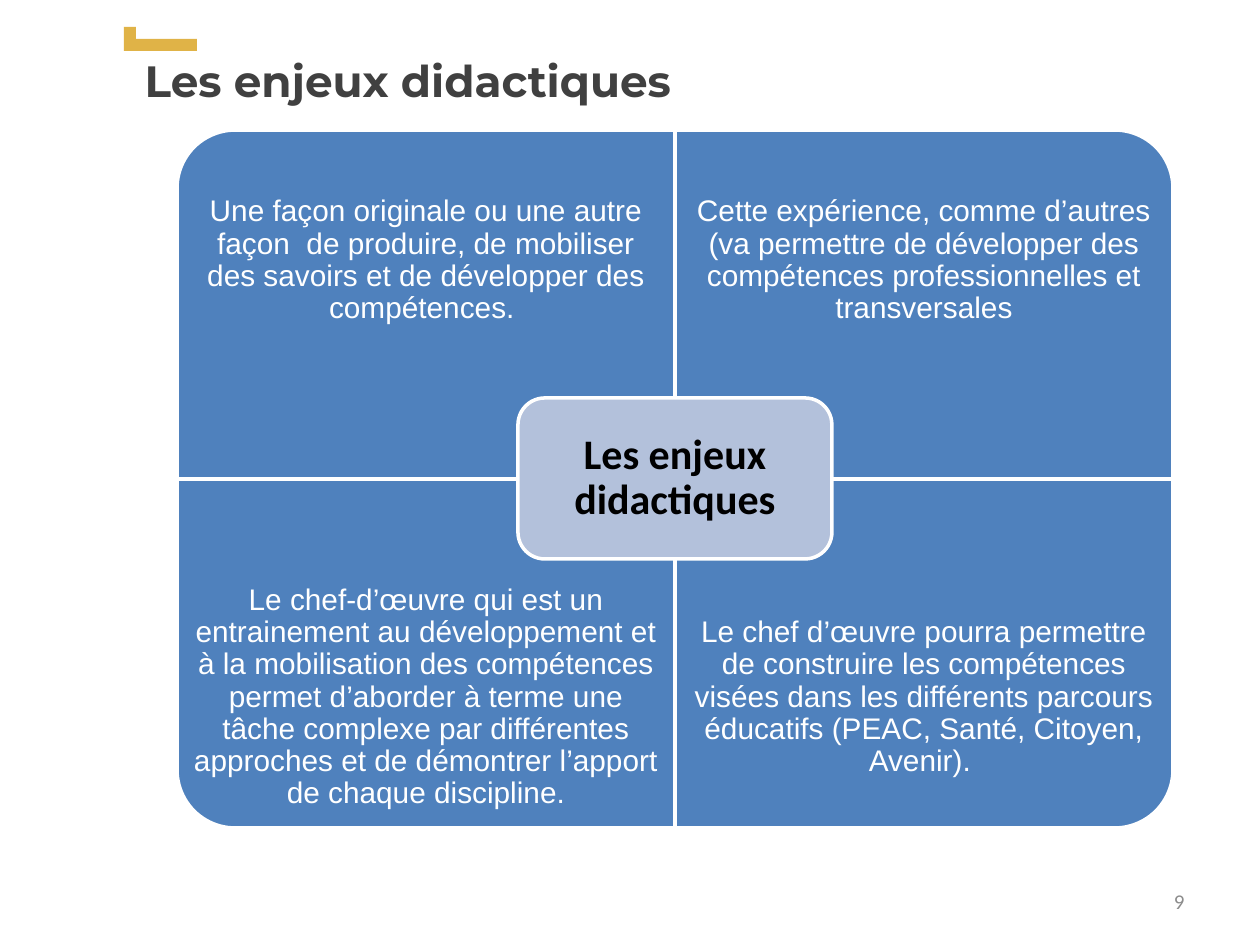
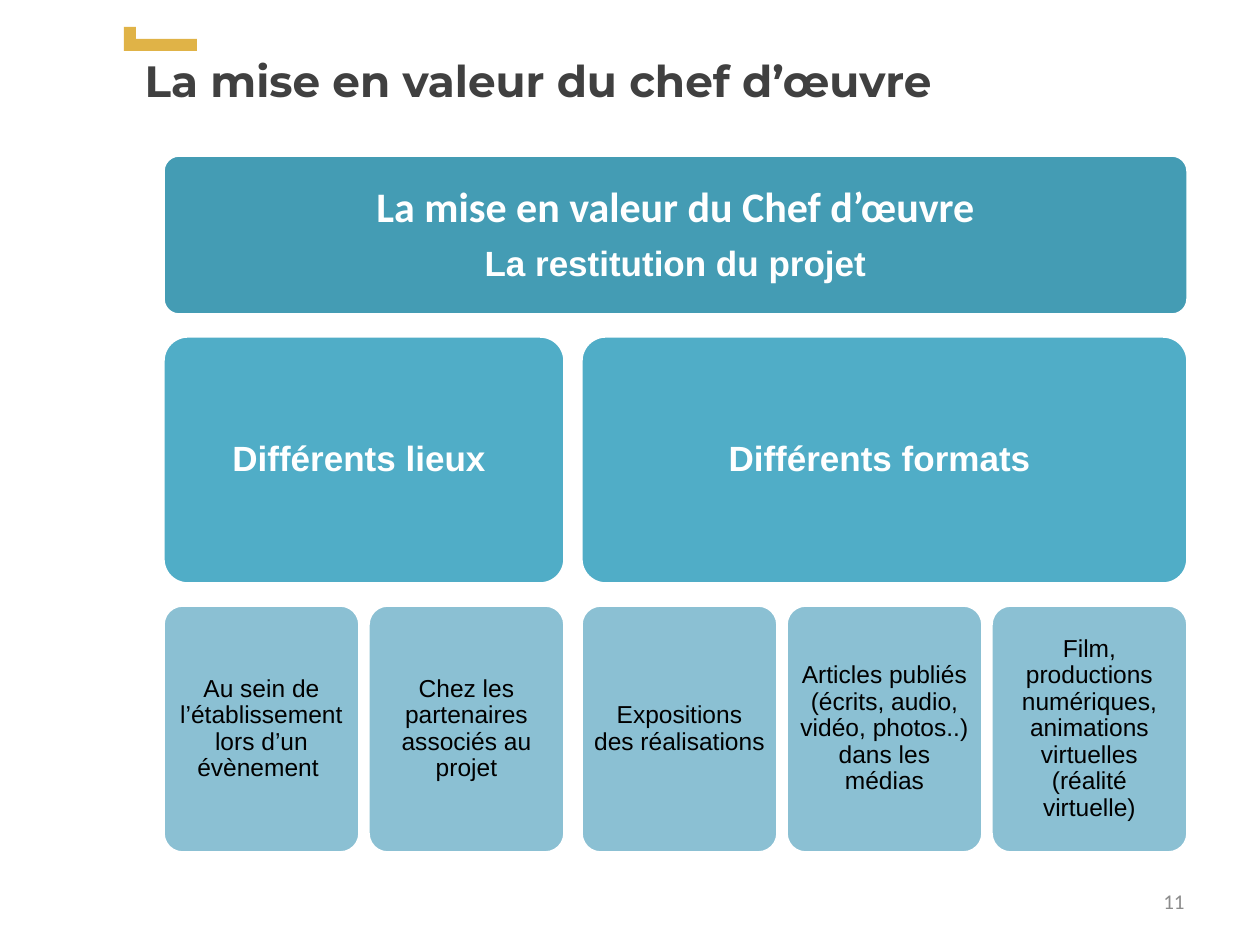
"""Build two slides on the didactic stakes and showcasing of the chef d’œuvre."""
from dataclasses import dataclass
from typing import Any, NamedTuple

from pptx import Presentation
from pptx.dml.color import RGBColor
from pptx.enum.shapes import MSO_SHAPE
from pptx.enum.text import MSO_ANCHOR, MSO_AUTO_SIZE, PP_ALIGN
from pptx.util import Emu, Pt


class Box(NamedTuple):
    """Left, top, width and height in px."""
    x: int
    y: int
    w: int
    h: int


class Style(NamedTuple):
    """Font of one piece of text."""
    name: str
    size: int
    color: str
    bold: bool = False


class Line(NamedTuple):
    """One paragraph and its style."""
    text: str
    style: Style


class Quadrant(NamedTuple):
    """One quarter of the matrix, turned so its round corner points outward."""
    col: int
    row: int
    rotation: int
    text: str


class Branch(NamedTuple):
    """A heading block with the leaf blocks under it."""
    title: str
    leaves: tuple[str, ...]


@dataclass(frozen=True)
class Theme:
    """Colours and type styles of the deck."""
    white: str = "FFFFFF"
    accent: str = "E0B347"
    quadrant: str = "4F81BD"
    hub: str = "B3C1DB"
    root: str = "449CB4"
    branch: str = "50ADC7"
    leaf: str = "8BC0D3"
    title: Style = Style("Montserrat", 25, "404040", True)
    number: Style = Style("Calibri", 12, "8C8C8C")
    quadrant_text: Style = Style("Arial", 17, "FFFFFF")
    hub_text: Style = Style("Calibri", 24, "000000", True)
    root_text: Style = Style("Calibri", 24, "FFFFFF", True)
    heading: Style = Style("Arial", 20, "FFFFFF", True)
    leaf_text: Style = Style("Arial", 14, "000000")


THEME = Theme()
TITLE_ONLY = 5
SLIDE_W, SLIDE_H = 1260, 945
TITLE_BOX = Box(132, 47, 1086, 86)
NUMBER_BOX = Box(903, 876, 294, 50)
ACCENT_BARS = (Box(124, 27, 12, 24), Box(130, 39, 67, 12))

MATRIX = Box(177, 130, 996, 698)
HUB = Box(518, 398, 314, 161)
QUADRANT_TEXT_H = 261
QUADRANTS = (
    Quadrant(0, 0, 270, "Une façon originale ou une autre façon  de produire, de mobiliser "
             "des savoirs et de développer des compétences. "),
    Quadrant(1, 0, 0, "Cette expérience, comme d’autres (va permettre de développer des "
             "compétences professionnelles et transversales"),
    Quadrant(0, 1, 180, "Le chef-d’œuvre qui est un entrainement au développement et à la "
             "mobilisation des compétences permet d’aborder à terme une tâche complexe par "
             "différentes approches et de démontrer l’apport de chaque discipline."),
    Quadrant(1, 1, 90, "Le chef d’œuvre pourra permettre de construire les compétences "
             "visées dans les différents parcours éducatifs (PEAC, Santé, Citoyen, Avenir). "),
)

ROOT = Box(163, 155, 1025, 160)
ROW_GAP, ROW_H = 21, 248
LEAF_W, LEAF_GAP, BRANCH_GAP = 197, 8, 16
BRANCHES = (
    Branch("Différents lieux ", (
        "Au sein de l’établissement lors d’un évènement ",
        "Chez les partenaires associés au projet")),
    Branch("Différents formats ", (
        "Expositions des réalisations",
        "Articles publiés (écrits, audio, vidéo, photos..) dans les médias",
        "Film, productions numériques, animations virtuelles (réalité virtuelle)")),
)


def px(n: float) -> Emu:
    """Turn px into EMU."""
    return Emu(round(n * 914400 / 126))


def apply(obj: Any, **values: Any) -> None:
    """Set each named attribute on an object."""
    for key, value in values.items():
        setattr(obj, key, value)


def place(box: Box) -> dict[str, Emu]:
    """Return the position attributes of a box."""
    return dict(zip(("left", "top", "width", "height"), map(px, box)))


def write(tf: Any, lines: list[Line], inset: int | None = None,
          anchor: Any = MSO_ANCHOR.MIDDLE, **paragraph: Any) -> None:
    """Fill a text frame with styled paragraphs."""
    apply(tf, word_wrap=True, auto_size=MSO_AUTO_SIZE.NONE, vertical_anchor=anchor)
    if inset is not None:
        sides = ("left", "top", "right", "bottom")
        apply(tf, **{f"margin_{side}": px(inset) for side in sides})
    for i, (text, style) in enumerate(lines):
        p = tf.add_paragraph() if i else tf.paragraphs[0]
        apply(p, **paragraph)
        if i:
            p.space_before = Pt(8)
        r = p.add_run()
        r.text = text
        apply(r.font, name=style.name, size=Pt(style.size), bold=style.bold)
        r.font.color.rgb = RGBColor.from_string(style.color)


def add_block(s: Any, kind: Any, box: Box, fill: str, outlined: bool = True) -> Any:
    """Add a filled preset shape."""
    sp = s.shapes.add_shape(kind, *map(px, box))
    sp.shadow.inherit = False
    sp.fill.solid()
    sp.fill.fore_color.rgb = RGBColor.from_string(fill)
    if outlined:
        sp.line.color.rgb = RGBColor.from_string(THEME.white)
        sp.line.width = Pt(2)
    else:
        sp.line.fill.background()
    return sp


def add_text(s: Any, box: Box, lines: list[Line], **fmt: Any) -> None:
    """Add a text box."""
    write(s.shapes.add_textbox(*map(px, box)).text_frame, lines, **fmt)


def add_card(s: Any, box: Box, fill: str, lines: list[Line], inset: int,
             corner: float | None = 0.1) -> None:
    """Add a rounded block with centred text."""
    sp = add_block(s, MSO_SHAPE.ROUNDED_RECTANGLE, box, fill)
    if corner is not None:
        sp.adjustments[0] = corner
    write(sp.text_frame, lines, inset, alignment=PP_ALIGN.CENTER, line_spacing=0.9)


def add_slide(prs: Any, title: str, number: int) -> Any:
    """Add a slide with its accent mark, title and number."""
    s = prs.slides.add_slide(prs.slide_layouts[TITLE_ONLY])
    for bar in ACCENT_BARS:
        add_block(s, MSO_SHAPE.RECTANGLE, bar, THEME.accent, outlined=False)
    apply(s.shapes.title, **place(TITLE_BOX))
    write(s.shapes.title.text_frame, [Line(title, THEME.title)],
          anchor=MSO_ANCHOR.TOP, alignment=PP_ALIGN.LEFT)
    add_text(s, NUMBER_BOX, [Line(str(number), THEME.number)], alignment=PP_ALIGN.RIGHT)
    return s


def add_quadrant(s: Any, q: Quadrant) -> None:
    """Draw one quarter of the matrix and its text."""
    w, h = MATRIX.w // 2, MATRIX.h // 2
    x, y = MATRIX.x + q.col * w, MATRIX.y + q.row * h
    box = Box(x, y, w, h)
    if q.rotation % 180:
        box = Box(x + (w - h) / 2, y + (h - w) / 2, h, w)
    sp = add_block(s, MSO_SHAPE.ROUND_1_RECTANGLE, box, THEME.quadrant)
    sp.rotation = q.rotation
    text_box = Box(x, y + q.row * (h - QUADRANT_TEXT_H), w, QUADRANT_TEXT_H)
    add_text(s, text_box, [Line(q.text, THEME.quadrant_text)], inset=16,
             alignment=PP_ALIGN.CENTER, line_spacing=0.9)


def build_stakes(prs: Any) -> None:
    """Build the matrix of didactic stakes."""
    s = add_slide(prs, "Les enjeux didactiques", 9)
    for q in QUADRANTS:
        add_quadrant(s, q)
    add_card(s, HUB, THEME.hub, [Line("Les enjeux didactiques", THEME.hub_text)], 13, None)


def build_showcase(prs: Any) -> None:
    """Build the hierarchy of places and formats."""
    s = add_slide(prs, "La mise en valeur du chef d’œuvre", 11)
    add_card(s, ROOT, THEME.root, [
        Line("La mise en valeur du Chef d’œuvre", THEME.root_text),
        Line("La restitution du projet", THEME.heading)], 13)
    x, branch_y = ROOT.x, ROOT.y + ROOT.h + ROW_GAP
    leaf_y = branch_y + ROW_H + ROW_GAP
    step = LEAF_W + LEAF_GAP
    for branch in BRANCHES:
        w = len(branch.leaves) * step - LEAF_GAP
        add_card(s, Box(x, branch_y, w, ROW_H), THEME.branch,
                 [Line(branch.title, THEME.heading)], 10)
        for i, leaf in enumerate(branch.leaves):
            add_card(s, Box(x + i * step, leaf_y, LEAF_W, ROW_H), THEME.leaf,
                     [Line(leaf, THEME.leaf_text)], 7)
        x += w + BRANCH_GAP


def main() -> None:
    """Build and save the deck."""
    prs = Presentation()
    apply(prs, slide_width=px(SLIDE_W), slide_height=px(SLIDE_H))
    build_stakes(prs)
    build_showcase(prs)
    prs.save("out.pptx")


if __name__ == "__main__":
    main()
